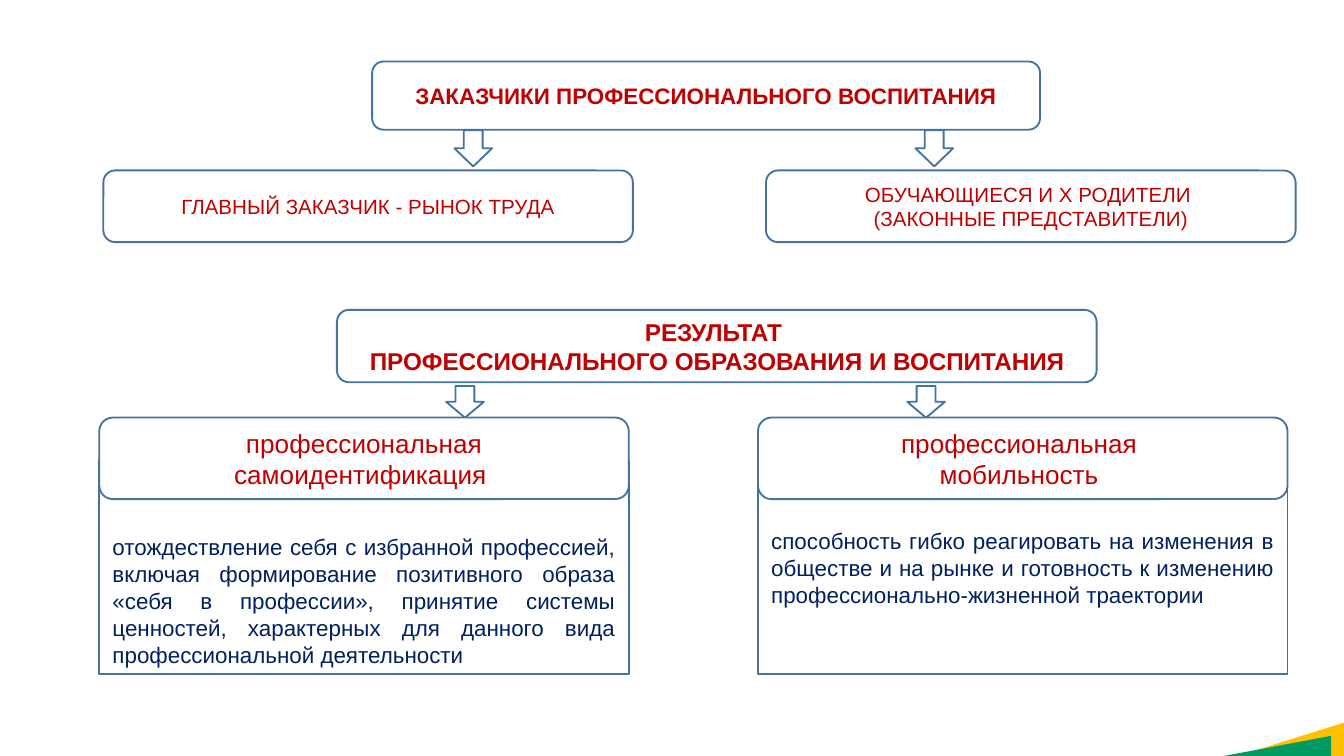
"""Build a slide on the customers and results of professional education."""
import pptx
import pptx.util
from pptx.dml.color import RGBColor
from pptx.enum.shapes import MSO_SHAPE
from pptx.enum.text import MSO_ANCHOR, PP_ALIGN

Pt = pptx.util.Pt
WHITE = RGBColor(0xFF, 0xFF, 0xFF)
OUTLINE = RGBColor(0x43, 0x73, 0x9E)
RED = RGBColor(0xC0, 0x00, 0x00)
NAVY = RGBColor(0x00, 0x20, 0x60)
YELLOW = RGBColor(0xFF, 0xC0, 0x00)
GREEN = RGBColor(0x00, 0x9B, 0x62)

COLUMN_WIDTH = 283.7
ARROW_WIDTH = 20.2
ARROW_GAP = 247

CORNERS = [
    ((681.1, 366.5, 18.7, 59.8), YELLOW),
    ((679, 370.8, 10.8, 57.6), GREEN),
]

SECTIONS = [
    {
        "title": ["ЗАКАЗЧИКИ ПРОФЕССИОНАЛЬНОГО ВОСПИТАНИЯ"],
        "title_box": (199.4, 33, 357.8, 36.5),
        "title_size": 12,
        "arrow": (243.4, 69.8, 19.4),
        "columns": [55.4, 410.4],
        "head_top": 91.3,
        "head_height": 38.4,
        "head_size": 11,
        "heads": [
            ["ГЛАВНЫЙ ЗАКАЗЧИК - РЫНОК ТРУДА"],
            ["ОБУЧАЮЩИЕСЯ И Х РОДИТЕЛИ ", "(ЗАКОННЫЕ ПРЕДСТАВИТЕЛИ)"],
        ],
        "bodies": [],
    },
    {
        "title": ["РЕЗУЛЬТАТ ", "ПРОФЕССИОНАЛЬНОГО ОБРАЗОВАНИЯ И ВОСПИТАНИЯ"],
        "title_box": (180.5, 166, 407, 38.8),
        "title_size": 13,
        "arrow": (239, 206.8, 17),
        "columns": [53.2, 406.1],
        "head_top": 223.7,
        "head_height": 43.7,
        "head_size": 14,
        "heads": [
            ["профессиональная самоидентификация "],
            ["профессиональная ", "мобильность "],
        ],
        "bodies": [
            ("отождествление себя с избранной профессией, включая формирование "
             "позитивного образа «себя в профессии», принятие системы ценностей, "
             "характерных для данного вида профессиональной деятельности",
             MSO_ANCHOR.BOTTOM),
            ("способность гибко реагировать на изменения в обществе и на рынке "
             "и готовность к изменению профессионально-жизненной траектории",
             MSO_ANCHOR.MIDDLE),
        ],
    },
]
BODY_TOP = 246.6
BODY_HEIGHT = 114.6
BODY_SIZE = 12


def add_figure(slide, kind, box, fill=WHITE, line=OUTLINE):
    shape = slide.shapes.add_shape(kind, *map(Pt, box))
    shape.shadow.inherit = False
    shape.fill.solid()
    shape.fill.fore_color.rgb = fill
    if line is None:
        shape.line.fill.background()
    else:
        shape.line.color.rgb = line
        shape.line.width = Pt(1)
    return shape


def add_text(shape, lines, size, color=RED, bold=False,
             align=PP_ALIGN.CENTER, anchor=MSO_ANCHOR.MIDDLE):
    frame = shape.text_frame
    frame.word_wrap = True
    frame.vertical_anchor = anchor
    for index, line in enumerate(lines):
        paragraph = frame.add_paragraph() if index else frame.paragraphs[0]
        paragraph.alignment = align
        run = paragraph.add_run()
        run.text = line
        run.font.name = "Arial"
        run.font.size = Pt(size)
        run.font.bold = bold
        run.font.color.rgb = color


def add_section(slide, section):
    title = add_figure(slide, MSO_SHAPE.ROUNDED_RECTANGLE, section["title_box"])
    add_text(title, section["title"], section["title_size"], bold=True)

    left, top, height = section["arrow"]
    for arrow_left in (left, left + ARROW_GAP):
        add_figure(slide, MSO_SHAPE.DOWN_ARROW, (arrow_left, top, ARROW_WIDTH, height))

    for left, (body, anchor) in zip(section["columns"], section["bodies"]):
        box = (left, BODY_TOP, COLUMN_WIDTH, BODY_HEIGHT)
        shape = add_figure(slide, MSO_SHAPE.RECTANGLE, box)
        add_text(shape, [body], BODY_SIZE, NAVY, align=PP_ALIGN.JUSTIFY, anchor=anchor)

    for left, head in zip(section["columns"], section["heads"]):
        box = (left, section["head_top"], COLUMN_WIDTH, section["head_height"])
        shape = add_figure(slide, MSO_SHAPE.ROUNDED_RECTANGLE, box)
        add_text(shape, head, section["head_size"])


def main():
    presentation = pptx.Presentation()
    presentation.slide_width = Pt(720)
    presentation.slide_height = Pt(405)
    slide = presentation.slides.add_slide(presentation.slide_layouts[6])
    for box, color in CORNERS:
        corner = add_figure(slide, MSO_SHAPE.RIGHT_TRIANGLE, box, color, None)
        corner.rotation = 270
    for section in SECTIONS:
        add_section(slide, section)
    presentation.save("out.pptx")


if __name__ == "__main__":
    main()
